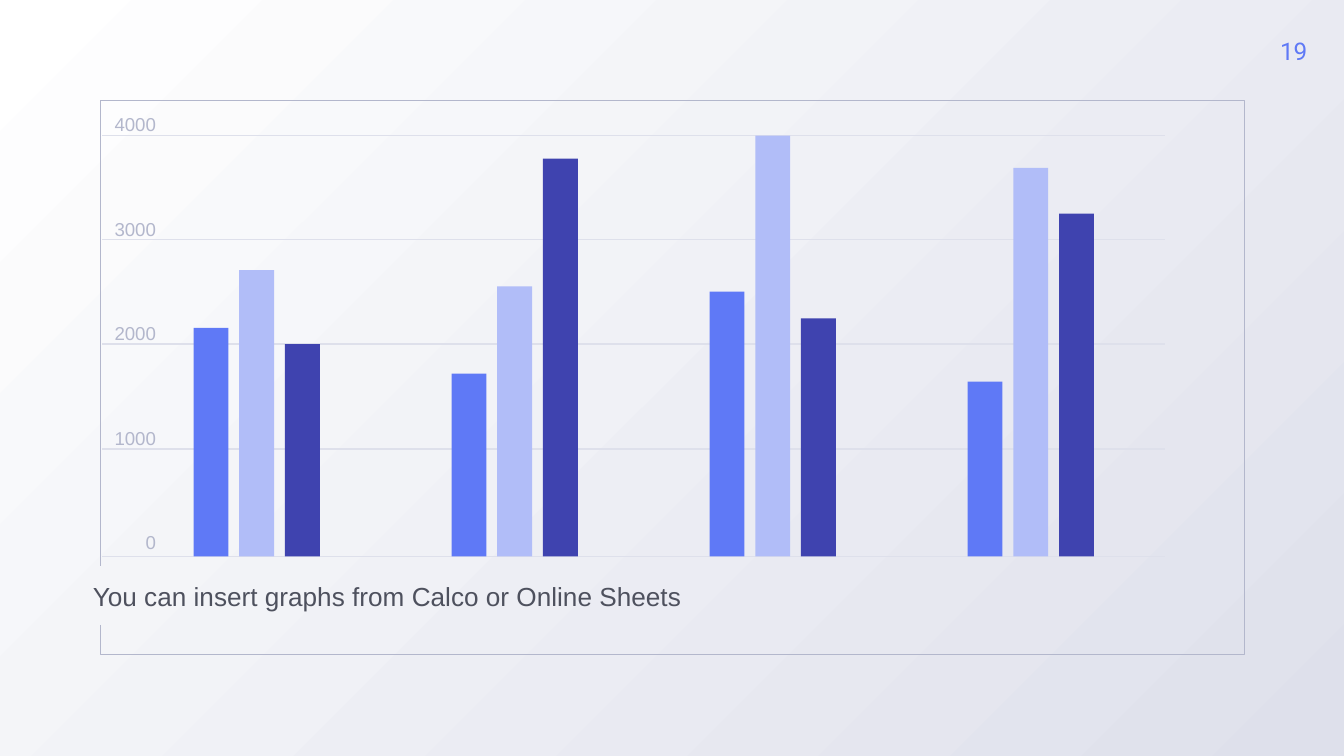
from pptx import Presentation, util as u
from pptx.dml.color import RGBColor
from pptx.enum import shapes, text
from pptx.oxml.ns import qn
from lxml import etree

HUES = {
    "white": "FFFFFF", "mist": "DEE0EB", "edge": "B3B7CC", "ink": "4E515E",
    "blue": "5F79F6", "pale": "B1BDF8", "navy": "3F43AF",
}
BASE = 4.14
GRID = [1.01, 1.78, 2.56, 3.34, BASE]
BARS = [  # bar heights in inches, one row per group
    (1.7, 2.13, 1.58),
    (1.36, 2.01, 2.96),
    (1.97, 3.13, 1.77),
    (1.3, 2.89, 2.55),
]


def hue(name):
    return RGBColor.from_string(HUES[name])


def set_back(slide):
    fill = slide.background.fill
    fill.gradient()
    fill.gradient_angle = 315
    for stop, name in zip(fill.gradient_stops, ("white", "mist")):
        stop.color.rgb = hue(name)


def add_frame(slide):
    """Draw the outline, left open on one side for the caption."""
    left, top, right, low = 0.75, 0.75, 9.26, 4.87
    spots = [(left, 4.65), (left, low), (right, low),
             (right, top), (left, top), (left, 4.21)]
    spots = [(u.Inches(x), u.Inches(y)) for x, y in spots]
    pen = slide.shapes.build_freeform(*spots[0])
    pen.add_line_segments(spots[1:], close=False)
    frame = pen.convert_to_shape()
    frame.shadow.inherit = False
    frame.fill.background()
    frame.line.color.rgb = hue("edge")
    frame.line.width = u.Pt(0.75)


def add_text(slide, box, lines, font, color, form, anchor, gap=0):
    """Add a text box; gap is the space before each line but the first."""
    frame = slide.shapes.add_textbox(*map(u.Inches, box)).text_frame
    look = {"word_wrap": True, "vertical_anchor": anchor, "margin_left": 0,
            "margin_right": 0, "margin_top": 0, "margin_bottom": 0}
    for key, val in look.items():
        setattr(frame, key, val)
    for i, line in enumerate(lines):
        para = frame.add_paragraph() if i else frame.paragraphs[0]
        run = para.add_run()
        run.text = line
        for key, val in form.items():
            setattr(para, key, val)
        if i and gap:
            para.space_before = u.Pt(gap)
        for key, val in font.items():
            setattr(run.font, key, val)
        run.font.color.rgb = hue(color)


def add_rule(slide, y):
    rule = slide.shapes.add_connector(
        shapes.MSO_CONNECTOR.STRAIGHT,
        *map(u.Inches, (0.76, y, 8.67, y)))
    rule.line.color.rgb = hue("mist")
    rule.line.width = u.Pt(0.75)
    etree.SubElement(rule._element.spPr, qn("a:effectLst"))


def add_bar(slide, x, high, color):
    bar = slide.shapes.add_shape(
        shapes.MSO_SHAPE.RECTANGLE,
        *map(u.Inches, (x, BASE - high, 0.26, high)))
    bar.shadow.inherit = False
    bar.fill.solid()
    bar.fill.fore_color.rgb = hue(color)
    bar.line.fill.background()


def main():
    deck = Presentation()
    deck.slide_width = u.Inches(10)
    deck.slide_height = deck.slide_width * 9 // 16
    slide = deck.slides.add_slide(deck.slide_layouts.get_by_name("Blank"))
    set_back(slide)
    add_frame(slide)
    mid, top = text.MSO_ANCHOR.MIDDLE, text.MSO_ANCHOR.TOP
    add_text(slide, (0.69, 4.2, 8.39, 0.44),
             ["You can insert graphs from Calco or Online Sheets"],
             {"name": "Arial", "size": u.Pt(14)}, "ink",
             {"line_spacing": 1.15}, mid)
    add_text(slide, (9.25, 0, 0.75, 0.75), ["19"],
             {"name": "Roboto", "size": u.Pt(13)}, "blue",
             {"alignment": text.PP_ALIGN.CENTER}, mid)
    for y in GRID:
        add_rule(slide, y)
    add_text(slide, (0.76, 0.84, 0.4, 3.31),
             [str(n) for n in range(4000, -1, -1000)],
             {"name": "Arial", "size": u.Pt(10)}, "edge",
             {"alignment": text.PP_ALIGN.RIGHT}, top, gap=44)
    for i, group in enumerate(BARS):
        for j, (high, color) in enumerate(zip(group, ("blue", "pale", "navy"))):
            add_bar(slide, 1.44 + 1.92 * i + 0.34 * j, high, color)
    deck.save("out.pptx")


if __name__ == "__main__":
    main()
